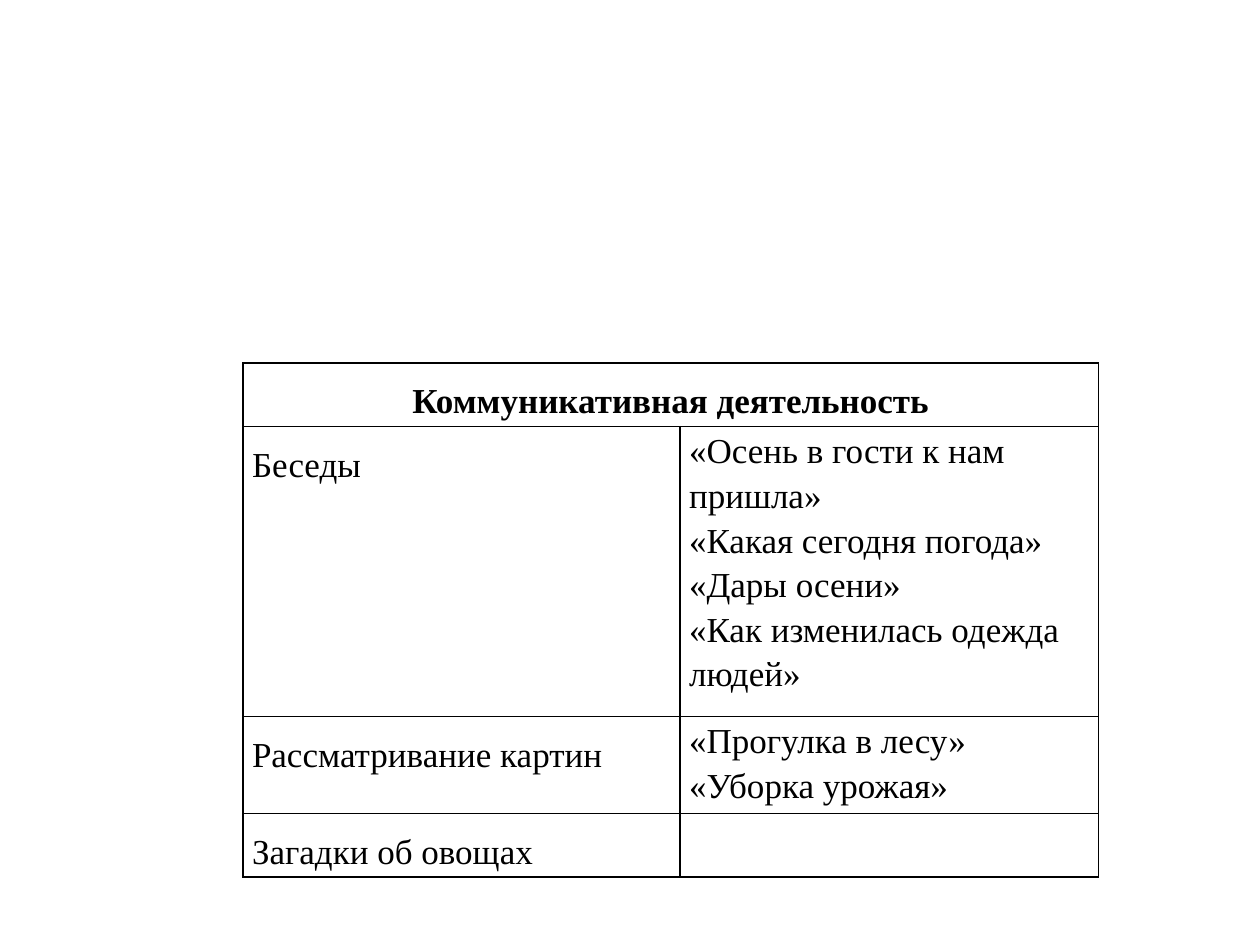
from dataclasses import dataclass

from lxml.etree import SubElement
from pptx import Presentation
from pptx.dml.color import RGBColor
from pptx.enum.text import PP_ALIGN as Align
from pptx.oxml.ns import qn
from pptx.util import Cm, Pt


@dataclass(frozen=True)
class Theme:
    font: str = "Times New Roman"
    size: int = 20
    ink: str = "000000"
    paper: str = "FFFFFF"
    border: int = 1


THEME = Theme()
COLUMN_WIDTHS = (8.81, 8.43)
ROW_HEIGHTS = (1.28, 5.84, 1.96, 1.28)
HEADING = "Коммуникативная деятельность"
ACTIVITIES = [
    ("Беседы", [
        "«Осень в гости к нам пришла»",
        "«Какая сегодня погода»",
        "«Дары осени»",
        "«Как изменилась одежда людей»",
    ]),
    ("Рассматривание картин", ["«Прогулка в лесу»", "«Уборка урожая»"]),
    ("Загадки об овощах", []),
]
LABEL_FORMAT = {"line_spacing": 1.5, "space_after": Pt(10), "alignment": Align.LEFT}
HEADING_FORMAT = {**LABEL_FORMAT, "alignment": Align.CENTER}
TOPIC_FORMAT = {"line_spacing": 1.15, "space_after": Pt(0), "alignment": Align.LEFT}
CELL_FORMAT = {
    "margin_left": Cm(0.18),
    "margin_right": Cm(0.18),
    "margin_top": Cm(0),
    "margin_bottom": Cm(0),
}


def apply_format(target, values):
    for name, value in values.items():
        setattr(target, name, value)


def style_cell(cell):
    """Set the margins, the thin border on each side and the plain fill."""
    apply_format(cell, CELL_FORMAT)
    properties = cell._tc.get_or_add_tcPr()
    for side in ("a:lnL", "a:lnR", "a:lnT", "a:lnB"):
        line = SubElement(properties, qn(side), w=str(Pt(THEME.border)))
        fill = SubElement(line, qn("a:solidFill"))
        SubElement(fill, qn("a:srgbClr"), val=THEME.ink)
    cell.fill.background()


def write_cell(cell, lines, paragraph_format, bold=False):
    frame = cell.text_frame
    for index, line in enumerate(lines):
        paragraph = frame.add_paragraph() if index else frame.paragraphs[0]
        apply_format(paragraph, paragraph_format)
        run = paragraph.add_run()
        run.text = line
        apply_format(run.font, {"name": THEME.font, "size": Pt(THEME.size), "bold": bold})
        run.font.color.rgb = RGBColor.from_string(THEME.ink)


def add_activity_table(slide, left, top):
    table = slide.shapes.add_table(
        len(ROW_HEIGHTS), len(COLUMN_WIDTHS), left, top,
        Cm(sum(COLUMN_WIDTHS)), Cm(sum(ROW_HEIGHTS)),
    ).table
    apply_format(table, {"first_row": False, "horz_banding": False})
    for column, width in zip(table.columns, COLUMN_WIDTHS):
        column.width = Cm(width)
    for row, height in zip(table.rows, ROW_HEIGHTS):
        row.height = Cm(height)
    for cell in table.iter_cells():
        style_cell(cell)

    heading = table.cell(0, 0)
    heading.merge(table.cell(0, 1))
    write_cell(heading, [HEADING], HEADING_FORMAT, bold=True)
    for row, (label, topics) in enumerate(ACTIVITIES, start=1):
        write_cell(table.cell(row, 0), [label], LABEL_FORMAT)
        write_cell(table.cell(row, 1), topics, TOPIC_FORMAT)


def main():
    presentation = Presentation()
    presentation.slide_width, presentation.slide_height = Cm(25.4), Cm(19.05)
    slide = presentation.slides.add_slide(presentation.slide_layouts[6])
    background = slide.background.fill
    background.solid()
    background.fore_color.rgb = RGBColor.from_string(THEME.paper)
    add_activity_table(slide, Cm(4.9), Cm(7.32))
    presentation.save("out.pptx")


if __name__ == "__main__":
    main()
